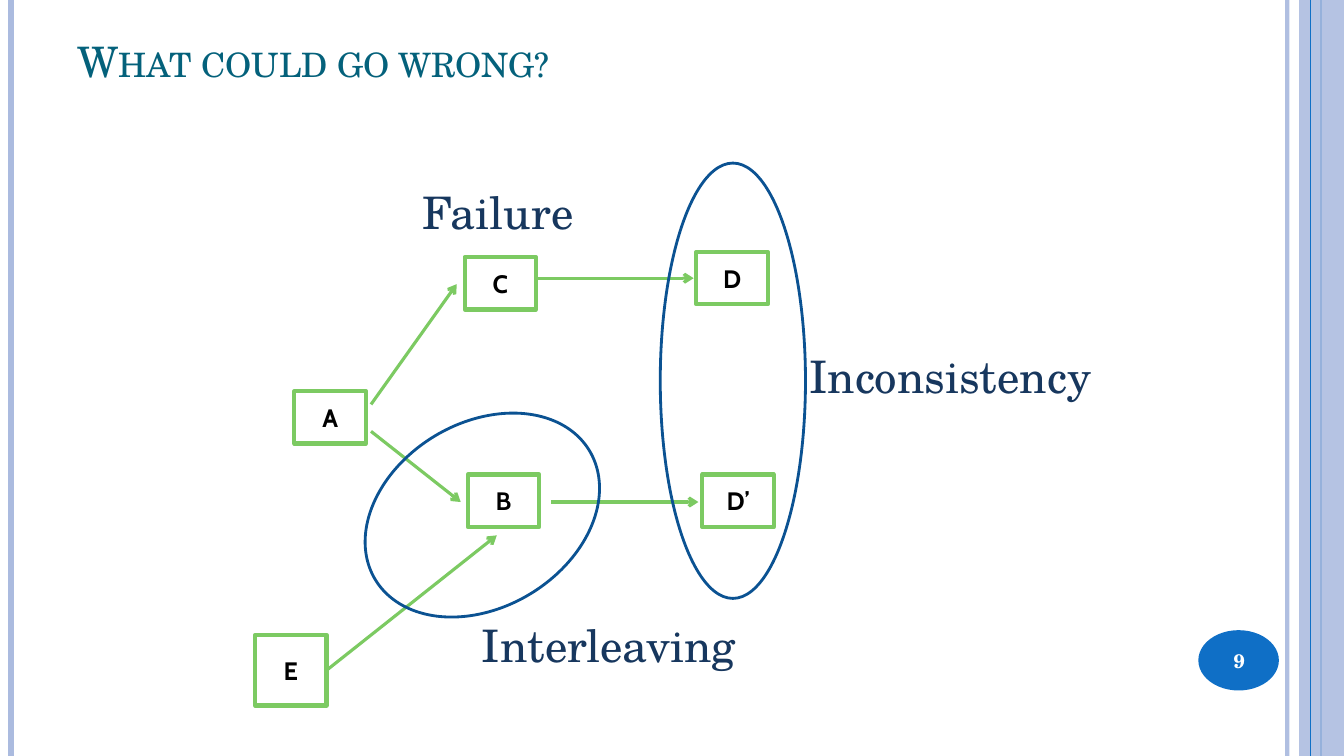
import dataclasses

import pptx
import pptx.dml.color
import pptx.enum.shapes
import pptx.enum.text
import pptx.oxml.ns
import pptx.util
from lxml import etree

Cm = pptx.util.Cm
Pt = pptx.util.Pt
Kind = pptx.enum.shapes.MSO_SHAPE
Align = pptx.enum.text.PP_ALIGN
Anchor = pptx.enum.text.MSO_ANCHOR
qn = pptx.oxml.ns.qn

WIDE, HIGH = 33.87, 19.05
BOX_W, BOX_H = 1.8, 1.32


@dataclasses.dataclass(frozen=True)
class Theme:
    serif: str = "TeX Gyre Schola"
    sans: str = "Cabin"
    title: str = "04617B"
    label: str = "17375E"
    node: str = "7CCA62"
    ring: str = "0B5292"
    band: str = "ABBBDF"
    badge: str = "0F6FC6"
    black: str = "000000"
    white: str = "FFFFFF"
    title_size: int = 30
    label_size: int = 32
    node_size: int = 18
    badge_size: int = 14


THEME = Theme()


def rgb(color):
    return pptx.dml.color.RGBColor.from_string(color)


def fade(part, amount):
    color = part.find(".//" + qn("a:srgbClr"))
    etree.SubElement(color, qn("a:alpha")).set("val", str(amount * 1000))


def write(frame, text, size, color, font=THEME.serif, bold=False, caps=False,
          align=Align.CENTER, anchor=Anchor.TOP):
    frame.word_wrap = True
    frame.auto_size = pptx.enum.text.MSO_AUTO_SIZE.NONE
    frame.vertical_anchor = anchor
    para = frame.paragraphs[0]
    para.alignment = align
    run = para.add_run()
    run.text = text
    run.font.name = font
    run.font.size = Pt(size)
    run.font.bold = bold
    run.font.color.rgb = rgb(color)
    if caps:
        run._r.get_or_add_rPr().set("cap", "small")


def add_shape(slide, kind, left, top, width, height, fill=None, line=None, weight=1):
    shape = slide.shapes.add_shape(kind, Cm(left), Cm(top), Cm(width), Cm(height))
    shape.shadow.inherit = False
    if fill:
        shape.fill.solid()
        shape.fill.fore_color.rgb = rgb(fill)
    else:
        shape.fill.background()
    if line:
        shape.line.color.rgb = rgb(line)
        shape.line.width = Pt(weight)
    else:
        shape.line.fill.background()
    return shape


def add_line(slide, start, end, color, weight, arrow=False):
    line = slide.shapes.add_connector(
        pptx.enum.shapes.MSO_CONNECTOR.STRAIGHT, *map(Cm, start + end))
    line.line.color.rgb = rgb(color)
    line.line.width = Pt(weight)
    props = line._element.spPr
    if arrow:
        etree.SubElement(props.find(qn("a:ln")), qn("a:tailEnd")).set("type", "arrow")
    etree.SubElement(props, qn("a:effectLst"))
    return line


def add_rule(slide, left, color, weight):
    return add_line(slide, (left, 0), (left, HIGH), color, weight)


def add_node(slide, name, left, top, height=BOX_H):
    node = add_shape(slide, Kind.RECTANGLE, left, top, BOX_W, height,
                     line=THEME.node, weight=3)
    write(node.text_frame, name, THEME.node_size, THEME.black, font=THEME.sans,
          bold=True, anchor=Anchor.MIDDLE)


def add_text(slide, text, left, top, width, height, **style):
    box = slide.shapes.add_textbox(Cm(left), Cm(top), Cm(width), Cm(height))
    write(box.text_frame, text, **style)


def add_ring(slide, left, top, width, height, turn=0):
    ring = add_shape(slide, Kind.OVAL, left, top, width, height,
                     line=THEME.ring, weight=2)
    ring.rotation = turn


def add_frame(slide):
    edge = add_rule(slide, 32.44, THEME.band, 3)
    fade(edge._element.spPr, 93)
    add_rule(slide, 0.28, THEME.band, 4.5)
    add_rule(slide, 33.3, THEME.badge, 1.5)
    band = add_shape(slide, Kind.RECTANGLE, 32.74, 0, WIDE - 32.74, HIGH, fill=THEME.band)
    fade(band._element.spPr, 87)
    add_rule(slide, 33.02, THEME.badge, 0.75)
    add_shape(slide, Kind.OVAL, 30.2, 15.88, 2.03, 1.52, fill=THEME.badge)


def set_title(slide, text):
    title = slide.shapes.title
    title.left, title.top, title.width, title.height = map(Cm, (1.7, 0.76, 27.66, 3.18))
    write(title.text_frame, text, THEME.title_size, THEME.title, caps=True,
          align=Align.LEFT)


def main():
    deck = pptx.Presentation()
    deck.slide_width, deck.slide_height = Cm(WIDE), Cm(HIGH)
    slide = deck.slides.add_slide(deck.slide_layouts.get_by_name("Title Only"))
    add_frame(slide)
    set_title(slide, "What could go wrong?")

    for start, end in (
        ((9.35, 10.19), (11.51, 7.16)),
        ((9.35, 10.87), (11.61, 12.65)),
        ((13.56, 7.01), (17.48, 7.01)),
        ((13.89, 12.65), (17.6, 12.65)),
        ((8.23, 16.89), (12.52, 13.49)),
    ):
        add_line(slide, start, end, THEME.node, 2.25, arrow=True)

    for name, left, top in (
        ("A", 7.42, 9.86),
        ("B", 11.79, 11.96),
        ("C", 11.71, 6.48),
        ("D’", 17.7, 11.96),
        ("D", 17.55, 6.35),
    ):
        add_node(slide, name, left, top)
    add_node(slide, "E", 6.43, 16, height=1.78)

    for text, left, top, width, height in (
        ("Inconsistency", 20.12, 8.66, 7.67, 1.75),
        ("Interleaving", 11.51, 15.44, 7.67, 2.34),
        ("Failure", 9.35, 4.52, 6.4, 1.75),
    ):
        add_text(slide, text, left, top, width, height,
                 size=THEME.label_size, color=THEME.label)

    add_ring(slide, 16.64, 4.11, 3.66, 10.97)
    add_ring(slide, 9.83, 9.83, 4.65, 6.3, turn=59)
    add_text(slide, "9", 30.1, 15.93, 2.26, 1.45, size=THEME.badge_size,
             color=THEME.white, bold=True, anchor=Anchor.MIDDLE)
    deck.save("out.pptx")


if __name__ == "__main__":
    main()
